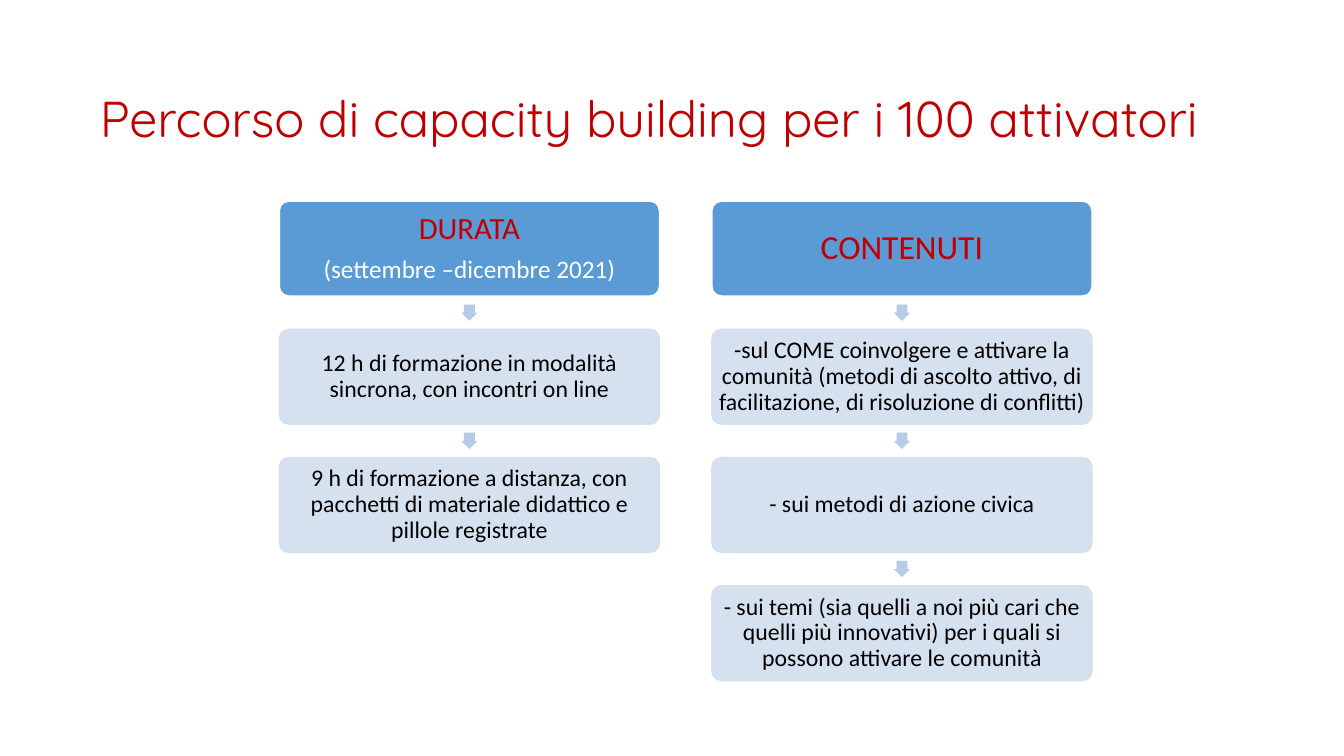
from lxml.etree import SubElement
from pptx import Presentation
from pptx.dml.color import RGBColor
from pptx.enum.shapes import MSO_SHAPE as Shape
from pptx.enum.text import MSO_ANCHOR as Anchor, MSO_AUTO_SIZE as AutoSize, PP_ALIGN as Align
from pptx.oxml.ns import qn
from pptx.util import Cm, Pt

RED = RGBColor(0xC0, 0x00, 0x00)
WHITE = RGBColor(0xFF, 0xFF, 0xFF)
BLACK = RGBColor(0x00, 0x00, 0x00)
BLUE = RGBColor(0x5B, 0x9B, 0xD5)
PALE_BLUE = RGBColor(0xD2, 0xDE, 0xEF)
ARROW_BLUE = RGBColor(0xB5, 0xCB, 0xE7)

FIRST_LEFT, COLUMN_PITCH = 7.04, 10.9
FIRST_TOP, ROW_PITCH = 5.07, 3.23
BOX_WIDTH, BOX_HEIGHT = 9.58, 2.39
ARROW_SIZE = 0.41

TITLE = "Percorso di capacity building per i 100 attivatori"
COLUMNS = [
    (
        [("DURATA", 22, RED), ("(settembre –dicembre 2021)", 18, WHITE)],
        [
            "12 h di formazione in modalità sincrona, con incontri on line",
            "9 h di formazione a distanza, con pacchetti di materiale didattico e pillole registrate",
        ],
    ),
    (
        [("CONTENUTI", 24, RED)],
        [
            "-sul COME coinvolgere e attivare la comunità (metodi di ascolto attivo, "
            "di facilitazione, di risoluzione di conflitti)",
            "- sui metodi di azione civica",
            "- sui temi (sia quelli a noi più cari che quelli più innovativi) per i quali "
            "si possono attivare le comunità",
        ],
    ),
]


def set_values(target, values):
    """Set each named attribute of the target."""
    for name, value in values.items():
        setattr(target, name, value)


def write_line(para, text, size, color, font="Calibri", align=Align.CENTER):
    """Write one formatted span into a paragraph."""
    set_values(para, {"alignment": align, "line_spacing": 0.9})
    span = para.add_run()
    span.text = text
    set_values(span.font, {"name": font, "size": Pt(size), "bold": False})
    span.font.color.rgb = color


def set_opacity(fill_parent, percent):
    """Make the solid fill of an XML element partly transparent."""
    color = fill_parent.find(qn("a:solidFill"))[0]
    SubElement(color, qn("a:alpha"), val=str(percent * 1000))


def add_title(page):
    """Place and write the slide title."""
    title = page.shapes.title
    set_values(title, {"left": Cm(2.26), "top": Cm(1.45), "width": Cm(30.05), "height": Cm(3.2)})
    frame = title.text_frame
    set_values(frame, {"word_wrap": True, "auto_size": AutoSize.NONE, "vertical_anchor": Anchor.MIDDLE})
    write_line(frame.paragraphs[0], TITLE, 36, RED, "Quicksand", Align.LEFT)


def add_box(page, left, top, lines, fill, outline, opacity=100):
    """Add a rounded box with centred lines of text."""
    box = page.shapes.add_shape(
        Shape.ROUNDED_RECTANGLE, Cm(left), Cm(top), Cm(BOX_WIDTH), Cm(BOX_HEIGHT))
    box.adjustments[0] = 0.1
    box.shadow.inherit = False
    box.fill.solid()
    box.fill.fore_color.rgb = fill
    box.line.color.rgb = outline
    box.line.width = Pt(1)
    if opacity < 100:
        properties = box.fill._xPr
        set_opacity(properties, opacity)
        set_opacity(properties.find(qn("a:ln")), opacity)
    frame = box.text_frame
    set_values(frame, {"word_wrap": True, "vertical_anchor": Anchor.MIDDLE})
    set_values(frame, {f"margin_{side}": Cm(0.05) for side in ("left", "top", "right", "bottom")})
    for index, line in enumerate(lines):
        para = frame.add_paragraph() if index else frame.paragraphs[0]
        write_line(para, *line)
        if index:
            para.space_before = Pt(7.7)


def add_arrow(page, box_left, next_top):
    """Add a downward arrow centred in the gap above a box."""
    left = box_left + (BOX_WIDTH - ARROW_SIZE) / 2
    top = next_top - (ROW_PITCH - BOX_HEIGHT + ARROW_SIZE) / 2
    arrow = page.shapes.add_shape(
        Shape.RIGHT_ARROW, Cm(left), Cm(top), Cm(ARROW_SIZE), Cm(ARROW_SIZE))
    arrow.rotation = 90
    arrow.adjustments[0] = 0.67
    arrow.shadow.inherit = False
    arrow.fill.solid()
    arrow.fill.fore_color.rgb = ARROW_BLUE
    arrow.line.fill.background()


def add_column(page, left, heading, steps):
    """Add a heading box and the steps below it."""
    add_box(page, left, FIRST_TOP, heading, BLUE, WHITE)
    for row, step in enumerate(steps, start=1):
        top = FIRST_TOP + row * ROW_PITCH
        add_arrow(page, left, top)
        add_box(page, left, top, [(step, 17, BLACK)], PALE_BLUE, PALE_BLUE, 90)


def main():
    """Build and save the deck."""
    deck = Presentation()
    set_values(deck, {"slide_width": Cm(33.87), "slide_height": Cm(19.05)})
    page = deck.slides.add_slide(deck.slide_layouts[5])
    add_title(page)
    for index, (heading, steps) in enumerate(COLUMNS):
        add_column(page, FIRST_LEFT + index * COLUMN_PITCH, heading, steps)
    deck.save("out.pptx")


if __name__ == "__main__":
    main()
